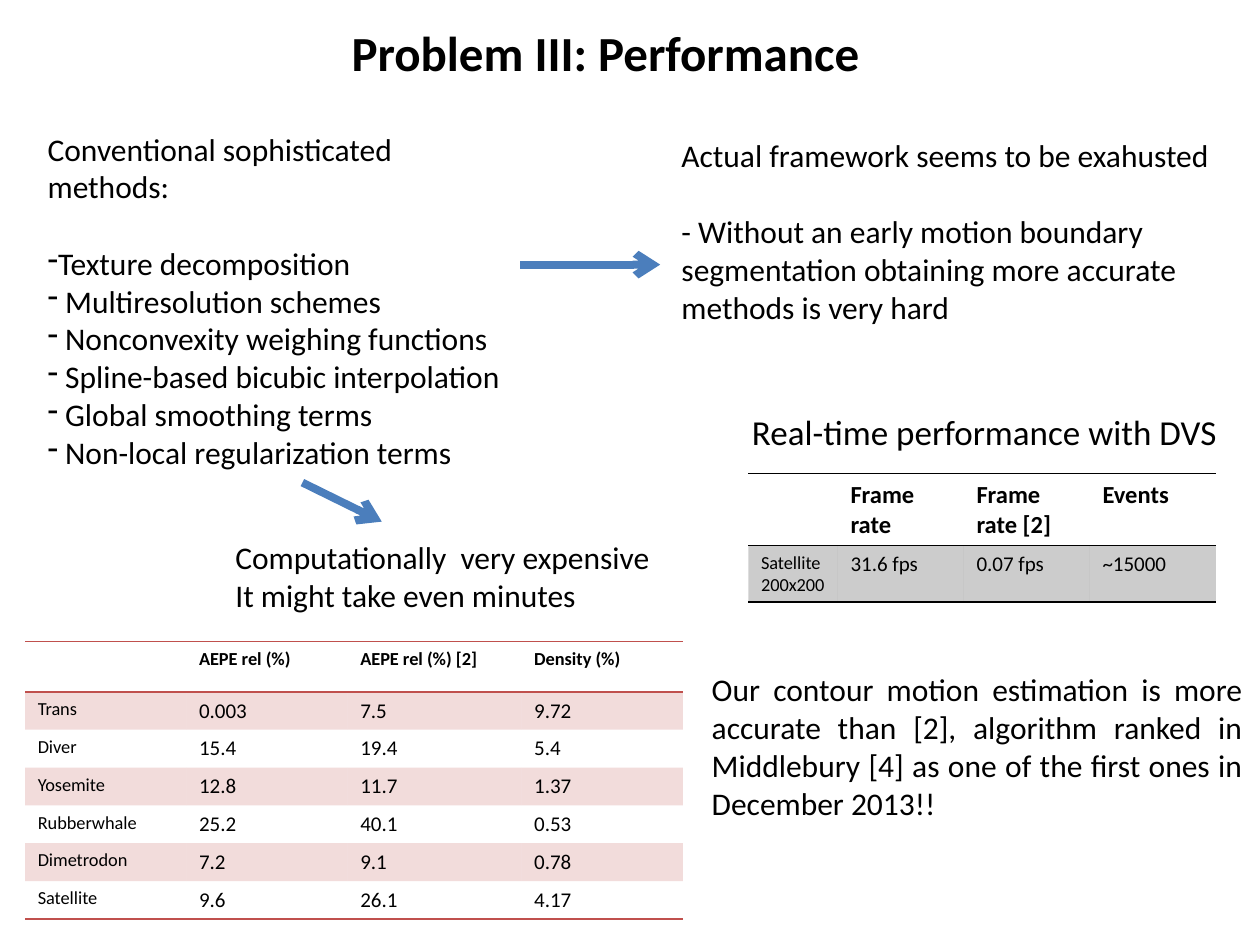
from dataclasses import dataclass

from pptx import Presentation
from pptx.dml.color import RGBColor as RGB
from pptx.enum.shapes import MSO_CONNECTOR as Conn
from pptx.enum.text import MSO_AUTO_SIZE as Fit, PP_ALIGN as Align
from pptx.oxml import parse_xml
from pptx.oxml.ns import nsdecls, qn
from pptx.util import Inches, Pt

PLAIN = "{2D5ABB26-0587-4C30-8999-92F81FD0307C}"  # no style, no grid


@dataclass(frozen=True)
class Theme:
    font: str = "Calibri"
    ink: str = "000000"
    red: str = "C0504D"
    blue: str = "4B7EBC"
    title: float = 28
    head: float = 20
    body: float = 18
    mid: float = 14
    cell: float = 12
    small: float = 10.5
    gap: float = 22


def node(tag, body="", **attrs):
    pairs = " ".join(f'{key}="{val}"' for key, val in attrs.items())
    return parse_xml(f'<a:{tag} {nsdecls("a")} {pairs}>{body}</a:{tag}>')


def write(para, text, theme, size, bold=False, align=None, gap=0, dash=False):
    """Fill one paragraph; dash gives it a hyphen bullet."""
    if align is not None:
        para.alignment = align
    if gap:
        para.space_before = Pt(gap)
    if dash:
        para._p.get_or_add_pPr().append(node("buChar", char="-"))
    run = para.add_run()
    run.text = text
    font = run.font
    font.name, font.size, font.bold = theme.font, Pt(size), bold
    font.color.rgb = RGB.from_string(theme.ink)


class Deck:
    def __init__(self, theme):
        self.theme = theme
        self.prs = Presentation()
        self.prs.slide_width, self.prs.slide_height = Inches(10), Inches(7.5)
        self.slide = self.prs.slides.add_slide(self.prs.slide_layouts[6])

    def text(self, box, *items, **style):
        """Each item is a string or a (string, format) pair."""
        frame = self.slide.shapes.add_textbox(*map(Inches, box)).text_frame
        frame.word_wrap = True
        frame.auto_size = Fit.SHAPE_TO_FIT_TEXT
        style = {"size": self.theme.body, **style}
        for i, item in enumerate(items):
            para = frame.add_paragraph() if i else frame.paragraphs[0]
            words, extra = (item, {}) if isinstance(item, str) else item
            write(para, words, self.theme, **{**style, **extra})

    def arrow(self, x1, y1, x2, y2):
        ends = map(Inches, (x1, y1, x2, y2))
        link = self.slide.shapes.add_connector(Conn.STRAIGHT, *ends)
        link.line.color.rgb = RGB.from_string(self.theme.blue)
        link.line.width = Pt(4.5)
        link.line._get_or_add_ln().append(node("tailEnd", type="arrow"))
        link._element.spPr.append(node("effectLst"))

    def table(self, left, top, cols, rows, data, color, head):
        """Ruled table with a bold header and every other row tinted."""
        box = map(Inches, (left, top, sum(cols), sum(rows)))
        grid = self.slide.shapes.add_table(len(rows), len(cols), *box).table
        grid.horz_banding = False
        grid._tbl.tblPr.find(qn("a:tableStyleId")).text = PLAIN
        for col, width in zip(grid.columns, cols):
            col.width = Inches(width)
        for r, (height, line) in enumerate(zip(rows, data)):
            grid.rows[r].height = Inches(height)
            sides = ["lnT", "lnB"] if r == 0 else []
            if r == len(rows) - 1:
                sides = ["lnB"]
            for c, words in enumerate(line):
                cell = grid.cell(r, c)
                size = self.theme.small if c == 0 else self.theme.cell
                write(cell.text_frame.paragraphs[0], words, self.theme,
                      size=size if r else head, bold=r == 0)
                self.rule(cell, sides, color)
                self.tint(cell, color if r % 2 else None)

    def rule(self, cell, sides, color):
        fill = f'<a:solidFill><a:srgbClr val="{color}"/></a:solidFill>'
        for side in sides:
            cell._tc.get_or_add_tcPr().append(node(side, fill, w=Pt(1)))

    def tint(self, cell, color):
        if color is None:
            cell.fill.background()
            return
        cell.fill.solid()
        cell.fill.fore_color.rgb = RGB.from_string(color)
        tone = next(cell._tc.tcPr.iter(qn("a:srgbClr")), None)
        for tone in cell._tc.tcPr.find(qn("a:solidFill")):
            tone.append(node("alpha", val=20000))


def main():
    theme = Theme()
    deck = Deck(theme)
    deck.text((0.83, 0.13, 7.95, 0.57), "Problem III: Performance",
              size=theme.title, bold=True, align=Align.CENTER)

    deck.table(5.94, 3.76, [0.71, 1, 1, 1], [0.57, 0.45], [
        ["", "Frame rate", "Frame rate [2]", "Events"],
        ["Satellite 200x200", "31.6 fps", "0.07 fps", "~15000"],
    ], theme.ink, theme.mid)
    deck.text((5.87, 3.21, 3.94, 0.44), "Real-time performance with DVS",
              size=theme.head)

    dash = {"dash": True}
    deck.text(
        (0.28, 0.98, 3.86, 2.83),
        "Conventional sophisticated methods:",
        ("Texture decomposition", {"dash": True, "gap": theme.gap}),
        (" Multiresolution schemes", dash),
        (" Nonconvexity weighing functions", dash),
        (" Spline-based bicubic interpolation", dash),
        (" Global smoothing terms", dash),
        (" Non-local regularization terms", dash))
    deck.text(
        (5.31, 1.03, 4.49, 1.62),
        "Actual framework seems to be exahusted",
        ("- Without an early motion boundary  segmentation obtaining "
         "more accurate methods is very hard", {"gap": theme.gap}))

    deck.arrow(4.13, 2.1, 5.24, 2.1)
    deck.arrow(2.4, 3.83, 3.03, 4.14)
    deck.text((1.77, 4.22, 3.86, 0.71), "Computationally  very expensive",
              "It might take even minutes")

    deck.table(0.2, 5.09, [1.28, 1.28, 1.38, 1.28], [0.4] + [0.3] * 6, [
        ["", "AEPE rel (%)", "AEPE rel (%) [2]", "Density (%)"],
        ["Trans", "0.003", "7.5", "9.72"],
        ["Diver", "15.4", "19.4", "5.4"],
        ["Yosemite", "12.8", "11.7", "1.37"],
        ["Rubberwhale", "25.2", "40.1", "0.53"],
        ["Dimetrodon", "7.2", "9.1", "0.78"],
        ["Satellite", "9.6", "26.1", "4.17"],
    ], theme.red, theme.small)
    deck.text((5.55, 5.27, 4.41, 1.31),
              "Our contour motion estimation is more accurate than [2], "
              "algorithm ranked in Middlebury [4] as one of the first ones "
              "in December 2013!!", align=Align.JUSTIFY)

    deck.prs.save("out.pptx")


if __name__ == "__main__":
    main()
